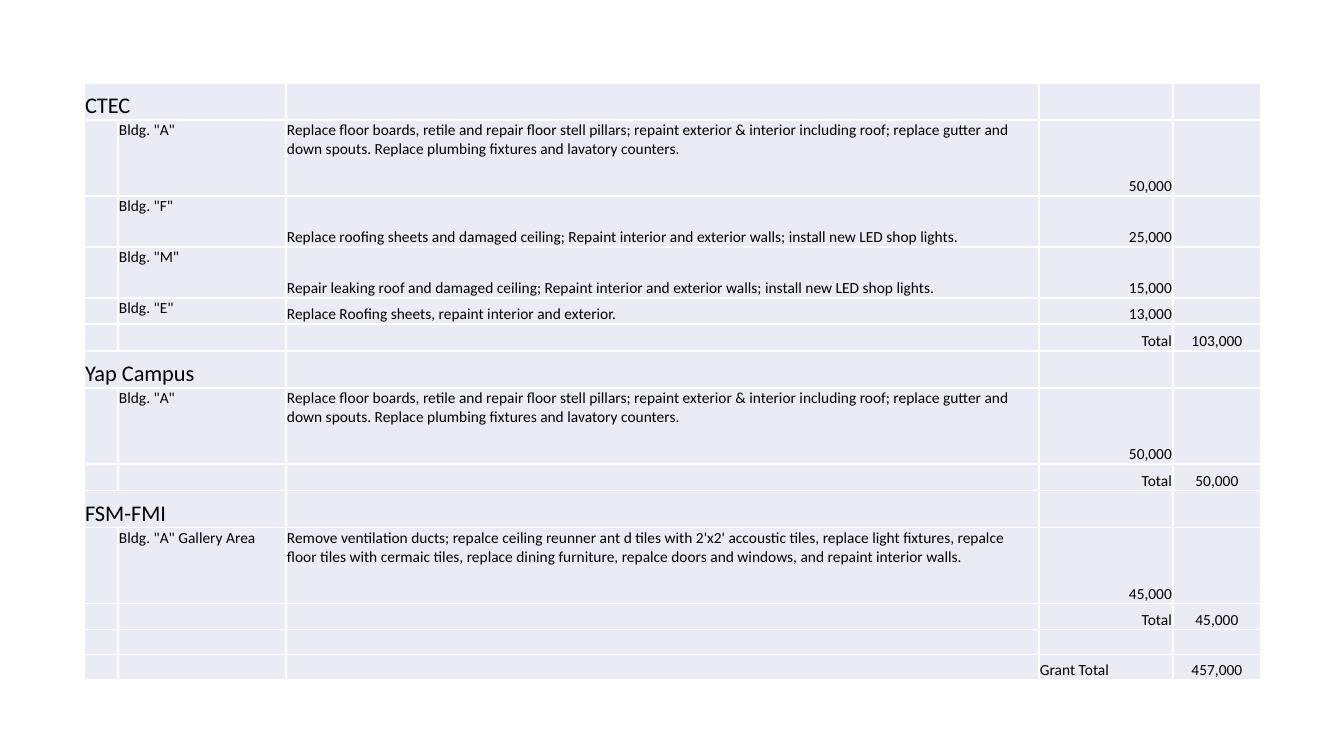
from dataclasses import dataclass

from lxml import etree
from pptx import Presentation
from pptx.dml.color import RGBColor
from pptx.enum.text import MSO_ANCHOR, PP_ALIGN
from pptx.oxml.ns import qn
from pptx.util import Pt

TOP, BOTTOM = MSO_ANCHOR.TOP, MSO_ANCHOR.BOTTOM
LEFT, CENTER, RIGHT = PP_ALIGN.LEFT, PP_ALIGN.CENTER, PP_ALIGN.RIGHT


@dataclass(frozen=True)
class Theme:
    """Colours, font and type sizes of the slide."""

    font: str = "Calibri"
    text: str = "000000"
    fill: str = "E9EBF5"
    border: str = "FFFFFF"
    border_width: int = 1
    heading_size: int = 16
    body_size: int = 11


THEME = Theme()
SLIDE_SIZE = (1344, 756)
TABLE_BOX = (84, 83, 1177, 597)
COLUMN_WIDTHS = (34, 168, 753, 134, 88)
HEADING_HEIGHT, TOTAL_HEIGHT, LINE_HEIGHT = 37, 27, 25
SHORT_HEIGHT, MEDIUM_HEIGHT, TALL_HEIGHT = 26, 51, 76

REBUILD = (
    "Replace floor boards, retile and repair floor stell pillars; repaint exterior & interior "
    "including roof; replace gutter and down spouts. Replace plumbing fixtures and lavatory counters."
)
FINISH = "damaged ceiling; Repaint interior and exterior walls; install new LED shop lights."
GALLERY = (
    "Remove ventilation ducts; repalce ceiling reunner ant d tiles with 2'x2' accoustic tiles, "
    "replace light fixtures, repalce floor tiles with cermaic tiles, replace dining furniture, "
    "repalce doors and windows, and repaint interior walls."
)

CAMPUSES = [
    ("CTEC", [
        (TALL_HEIGHT, TOP, 'Bldg. "A"', REBUILD, "50,000"),
        (MEDIUM_HEIGHT, BOTTOM, 'Bldg. "F"', f"Replace roofing sheets and {FINISH}", "25,000"),
        (MEDIUM_HEIGHT, BOTTOM, 'Bldg. "M"', f"Repair leaking roof and {FINISH}", "15,000"),
        (SHORT_HEIGHT, BOTTOM, 'Bldg. "E"',
         "Replace Roofing sheets, repaint interior and exterior.", "13,000"),
    ], "103,000", TOTAL_HEIGHT),
    ("Yap Campus", [
        (TALL_HEIGHT, TOP, 'Bldg. "A"', REBUILD, "50,000"),
    ], "50,000", TOTAL_HEIGHT),
    ("FSM-FMI", [
        (TALL_HEIGHT, TOP, 'Bldg. "A" Gallery Area', GALLERY, "45,000"),
    ], "45,000", SHORT_HEIGHT),
]
GRAND_TOTAL = ("Grant Total", "457,000")


def px(length):
    """Turn a pixel length into EMU."""
    return round(length * 914400 / 100.8)


def set_values(target, values):
    """Set each named attribute of the target."""
    for name, value in values.items():
        setattr(target, name, value)


def budget_rows():
    """List each row as its height and its filled cells by column."""
    rows = []
    for campus, buildings, total, total_height in CAMPUSES:
        rows.append((HEADING_HEIGHT, {0: (campus, LEFT, BOTTOM)}))
        for height, anchor, building, work, cost in buildings:
            rows.append((height, {
                1: (building, LEFT, TOP),
                2: (work, LEFT, anchor),
                3: (cost, RIGHT, BOTTOM),
            }))
        rows.append((total_height, {3: ("Total", RIGHT, BOTTOM), 4: (total, CENTER, BOTTOM)}))
    label, amount = GRAND_TOTAL
    rows.append((LINE_HEIGHT, {}))
    rows.append((LINE_HEIGHT, {3: (label, LEFT, BOTTOM), 4: (amount, CENTER, BOTTOM)}))
    return rows


def style_cell(cell):
    """Give a cell its borders, fill and margins."""
    properties = cell._tc.get_or_add_tcPr()
    for side in ("a:lnL", "a:lnR", "a:lnT", "a:lnB"):
        line = etree.SubElement(properties, qn(side), w=str(Pt(THEME.border_width)))
        line_fill = etree.SubElement(line, qn("a:solidFill"))
        etree.SubElement(line_fill, qn("a:srgbClr"), val=THEME.border)
    cell.fill.solid()
    cell.fill.fore_color.rgb = RGBColor.from_string(THEME.fill)
    set_values(cell, {
        "margin_left": px(1), "margin_right": px(1), "margin_top": px(1), "margin_bottom": 0,
    })


def write_cell(cell, text, alignment, anchor, size):
    """Write a cell's text; an empty cell keeps only its type size."""
    cell.vertical_anchor = anchor
    paragraph = cell.text_frame.paragraphs[0]
    paragraph.alignment = alignment
    if text:
        run = paragraph.add_run()
        run.text = text
        set_values(run.font, {"name": THEME.font, "size": Pt(size)})
        run.font.color.rgb = RGBColor.from_string(THEME.text)
    etree.SubElement(paragraph._p, qn("a:endParaRPr"), sz=str(size * 100))


def add_budget_table(slide, box):
    """Place the building repair budget in the given box."""
    rows = budget_rows()
    frame = slide.shapes.add_table(len(rows), len(COLUMN_WIDTHS), *map(px, box))
    table = frame.table
    set_values(table, {"first_row": False, "horz_banding": False})
    for column, width in zip(table.columns, COLUMN_WIDTHS):
        column.width = px(width)
    for row, (height, contents) in zip(table.rows, rows):
        row.height = px(height)
        is_heading = 0 in contents
        for index, cell in enumerate(row.cells):
            size = THEME.heading_size if is_heading and index == 0 else THEME.body_size
            style_cell(cell)
            write_cell(cell, *contents.get(index, ("", LEFT, TOP)), size)
        if is_heading:
            row.cells[0].merge(row.cells[1])


def main():
    """Build the slide and save it."""
    presentation = Presentation()
    width, height = map(px, SLIDE_SIZE)
    set_values(presentation, {"slide_width": width, "slide_height": height})
    slide = presentation.slides.add_slide(presentation.slide_layouts[6])
    add_budget_table(slide, TABLE_BOX)
    presentation.save("out.pptx")


if __name__ == "__main__":
    main()
